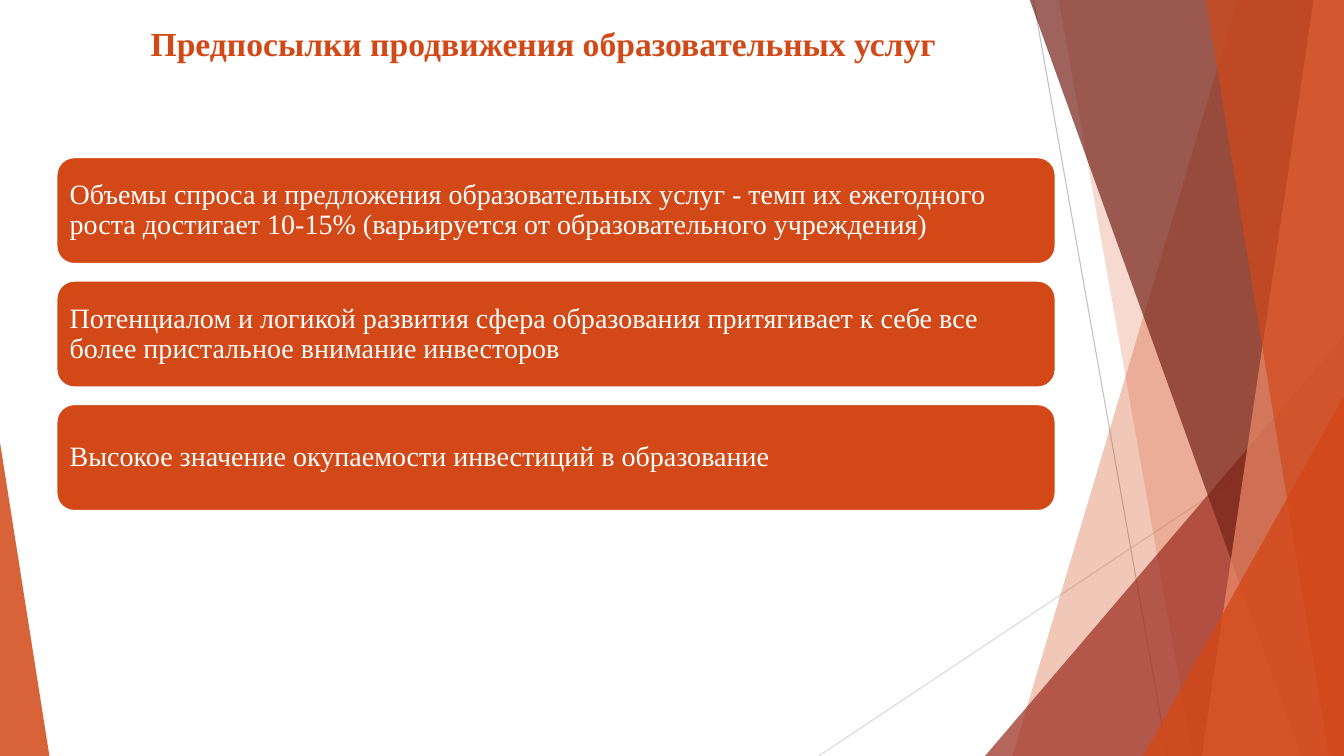
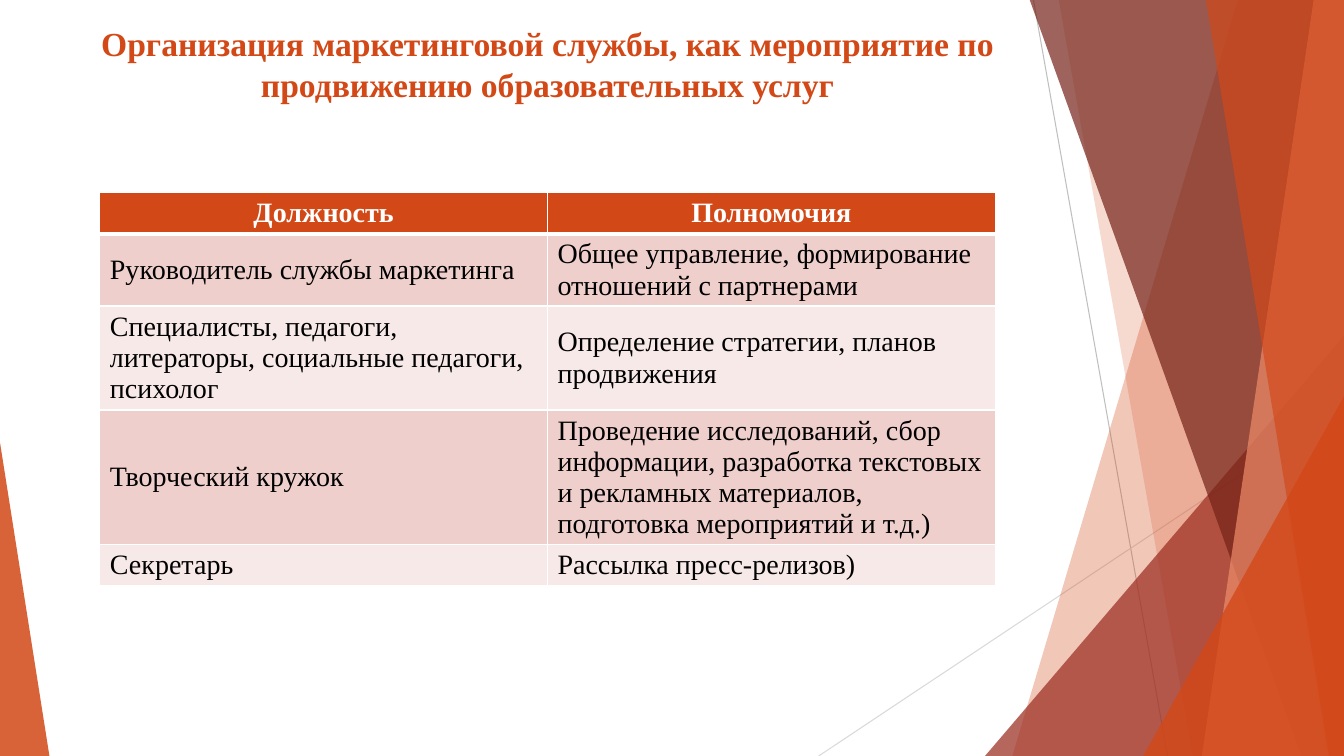
from lxml import etree
from pptx import Presentation
from pptx.dml.color import RGBColor
from pptx.enum.shapes import MSO_CONNECTOR, MSO_SHAPE
from pptx.enum.text import MSO_ANCHOR, MSO_AUTO_SIZE, PP_ALIGN
from pptx.oxml.ns import qn
from pptx.util import Inches, Pt

STRAIGHT = MSO_CONNECTOR.STRAIGHT
TRIANGLE = MSO_SHAPE.ISOSCELES_TRIANGLE
ROUNDED = MSO_SHAPE.ROUNDED_RECTANGLE
TOP, MIDDLE = MSO_ANCHOR.TOP, MSO_ANCHOR.MIDDLE
LEFT, CENTER = PP_ALIGN.LEFT, PP_ALIGN.CENTER

# Shared look
WIDTH, HEIGHT = 13.33, 7.5
FONT = "Times New Roman"
ORANGE, WHITE, BLACK = "D34817", "FFFFFF", "000000"
ROW_TINTS = ["EFCFCC", "F7E9E8"]
rgb = RGBColor.from_string


def paint(shape, color, opacity=100):
    """Give a shape a plain fill, without outline or shadow."""
    shape.shadow.inherit = False
    shape.line.fill.background()
    shape.fill.solid()
    shape.fill.fore_color.rgb = rgb(color)
    if opacity < 100:
        color_element = shape.element.spPr.find(qn("a:solidFill"))[0]
        alpha = etree.SubElement(color_element, qn("a:alpha"))
        alpha.set("val", str(opacity * 1000))


def add_text(paragraph, text, size, color, bold=False, align=LEFT):
    paragraph.alignment = align
    run = paragraph.add_run()
    run.text = text
    run.font.name = FONT
    run.font.size = Pt(size)
    run.font.bold = bold
    run.font.color.rgb = rgb(color)


presentation = Presentation()
presentation.slide_width = Inches(WIDTH)
presentation.slide_height = Inches(HEIGHT)
layout = presentation.slide_layouts.get_by_name("Title Only")

# Title position for all slides
layout_title = layout.placeholders[0]
layout_title.left, layout_title.top = Inches(0.73), Inches(0.18)
layout_title.width, layout_title.height = Inches(9.4), Inches(1.03)

# Slides and their titles
titles = [
    "Предпосылки продвижения образовательных услуг ",
    "Организация маркетинговой службы, как мероприятие по продвижению образовательных услуг",
]
slides = []
for text in titles:
    slide = presentation.slides.add_slide(layout)
    frame = slide.shapes.title.text_frame
    frame.auto_size = MSO_AUTO_SIZE.NONE
    frame.word_wrap = True
    frame.vertical_anchor = TOP
    add_text(frame.paragraphs[0], text, 24, ORANGE, bold=True, align=CENTER)
    slides.append(slide)
premises_slide, service_slide = slides

# Decoration: thin lines
decoration = premises_slide.shapes.add_group_shape()
thin_lines = [
    (10.25, 0, 11.58, HEIGHT, "BFBFBF"),
    (WIDTH, 4.03, 8.12, HEIGHT, "D9D9D9"),
]
for x1, y1, x2, y2, color in thin_lines:
    line = decoration.shapes.add_connector(
        STRAIGHT, Inches(x1), Inches(y1), Inches(x2), Inches(y2))
    line.line.color.rgb = rgb(color)
    line.line.width = Pt(0.75)
    etree.SubElement(line.element.spPr, qn("a:effectLst"))

# Decoration: bands (top x, bottom x) reach the right edge,
# triangles (left, top, width, apex) stand on the bottom edge
facets = [
    ((12.28, 10.04), ORANGE, 30),
    ((10.5, 11.83), ORANGE, 20),
    ((9.77, 3.33, 3.56, 1), "9B2D1F", 72),
    ((10.21, 12.91), "742217", 70),
    ((13.03, 11.92), "EF8C6A", 70),
    ((11.96, 13.18), ORANGE, 65),
    ((11.34, 3.93, 1.99, 1), ORANGE, 80),
    ((0, 4.39, 0.49, 0), ORANGE, 85),
]
for geometry, color, opacity in facets:
    if len(geometry) == 2:
        top_x, bottom_x = geometry
        builder = decoration.shapes.build_freeform(Inches(top_x), Inches(-0.01))
        corners = [(WIDTH, -0.01), (WIDTH, HEIGHT), (bottom_x, HEIGHT)]
        builder.add_line_segments([(Inches(x), Inches(y)) for x, y in corners])
        facet = builder.convert_to_shape()
    else:
        left, top, width, apex = geometry
        facet = decoration.shapes.add_shape(
            TRIANGLE, Inches(left), Inches(top), Inches(width), Inches(HEIGHT - top))
        facet.adjustments[0] = apex
    paint(facet, color, opacity)

# The layout carries the decoration, behind its placeholders
layout.shapes.element.insert(2, decoration.element)

# Slide 1: rounded boxes
premises = [
    "Объемы спроса и предложения образовательных услуг - темп их ежегодного роста достигает 10-15% (варьируется от образовательного учреждения)",
    "Потенциалом и логикой развития сфера образования притягивает к себе все более пристальное внимание инвесторов",
    "Высокое значение окупаемости инвестиций в образование",
]
first_top, last_top = 1.56, 4.01
step = (last_top - first_top) / (len(premises) - 1)
for index, text in enumerate(premises):
    box = premises_slide.shapes.add_shape(
        ROUNDED, Inches(0.56), Inches(first_top + index * step), Inches(9.91), Inches(1.06))
    paint(box, ORANGE)
    box.line.color.rgb = rgb(WHITE)
    box.line.width = Pt(1.5)
    frame = box.text_frame
    frame.word_wrap = True
    frame.vertical_anchor = MIDDLE
    frame.margin_left = frame.margin_right = Inches(0.08)
    frame.margin_top = frame.margin_bottom = Inches(0.08)
    frame.paragraphs[0].line_spacing = 0.9
    add_text(frame.paragraphs[0], text, 20, WHITE)

# Slide 2: table of posts and powers
rows = [
    ("Должность", "Полномочия"),
    ("Руководитель службы маркетинга",
     "Общее управление, формирование отношений с партнерами"),
    ("Специалисты, педагоги, литераторы, социальные педагоги, психолог",
     "Определение стратегии, планов продвижения"),
    ("Творческий кружок",
     "Проведение исследований, сбор информации, разработка текстовых и рекламных материалов, подготовка мероприятий и т.д.)"),
    ("Секретарь", "Рассылка пресс-релизов)"),
]
row_heights = [0.41, 0.7, 1.03, 1.33, 0.41]
table = service_slide.shapes.add_table(
    len(rows), 2, Inches(0.99), Inches(1.91), Inches(8.88), Inches(sum(row_heights))).table

for row_index, texts in enumerate(rows):
    is_header = row_index == 0
    table.rows[row_index].height = Inches(row_heights[row_index])
    for column_index, text in enumerate(texts):
        cell = table.cell(row_index, column_index)
        cell.vertical_anchor = MIDDLE
        # White borders, thicker between the header and the body
        properties = cell._tc.get_or_add_tcPr()
        for side in ("L", "R", "T", "B"):
            thick = (is_header and side == "B") or (row_index == 1 and side == "T")
            border = etree.SubElement(properties, qn(f"a:ln{side}"))
            border.set("w", str(Pt(3 if thick else 1)))
            border_fill = etree.SubElement(border, qn("a:solidFill"))
            etree.SubElement(border_fill, qn("a:srgbClr")).set("val", WHITE)
        cell.fill.solid()
        cell.fill.fore_color.rgb = rgb(ORANGE if is_header else ROW_TINTS[(row_index - 1) % 2])
        add_text(cell.text_frame.paragraphs[0], text, 20, WHITE if is_header else BLACK,
                 bold=is_header, align=CENTER if is_header else LEFT)

presentation.save("out.pptx")
